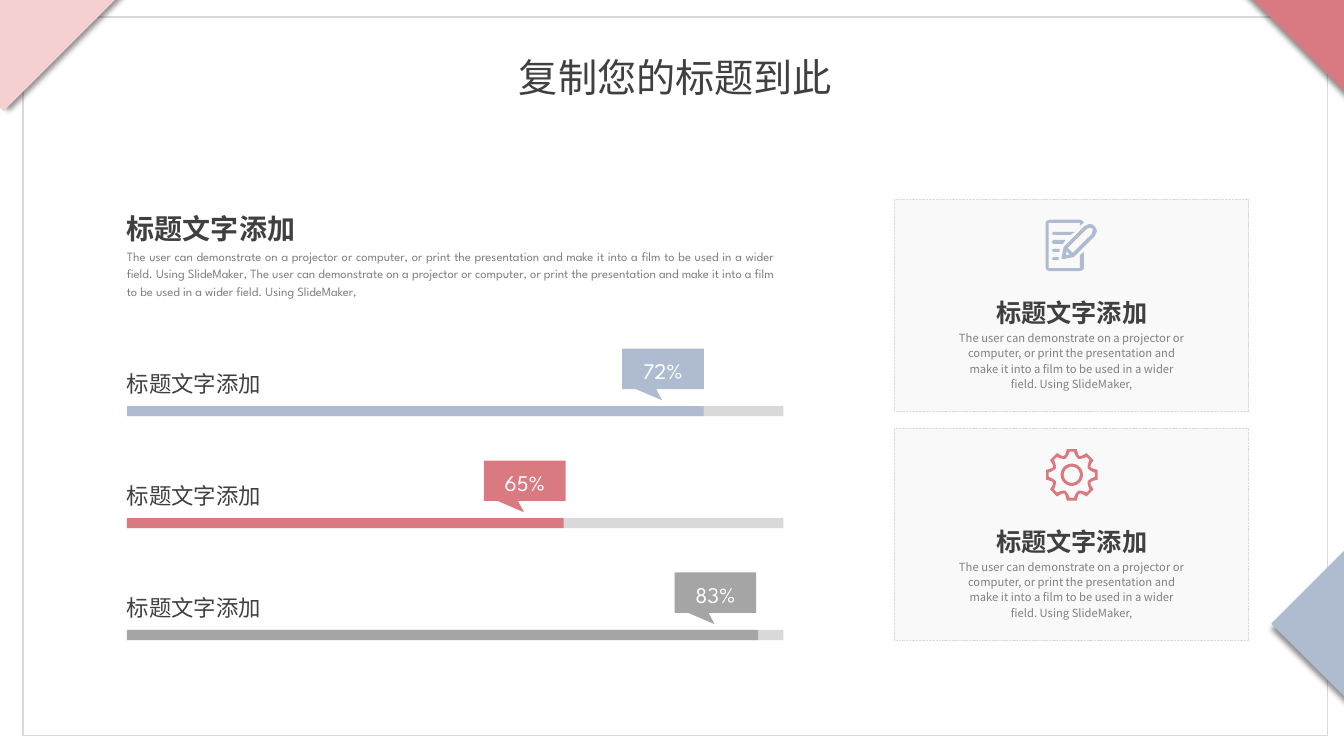
"""Build the slide with three progress bars and two icon cards."""
import dataclasses
import math

import lxml.etree
import pptx
import pptx.dml.color
import pptx.enum.dml
import pptx.enum.shapes
import pptx.enum.text
import pptx.oxml
import pptx.oxml.ns
import pptx.util

PX = pptx.util.Inches(0.01)
SHAPE = pptx.enum.shapes.MSO_SHAPE
ALIGN = pptx.enum.text.PP_ALIGN
HEADING = "标题文字添加"
SENTENCE = (
    "The user can demonstrate on a projector or computer, or print the presentation "
    "and make it into a film to be used in a wider field. Using SlideMaker,"
)
NOTE_ICON = [
    [(4, 0), (34, 0), (37, 1), (38, 3), (34, 6), (34, 3), (3, 3), (3, 48), (34, 48), (34, 35),
     (38, 32), (38, 48), (37, 50), (34, 51), (4, 51), (1, 50), (0, 48), (0, 3), (1, 1)],
    [(44, 4), (47, 5), (49, 7), (51, 11), (49, 16), (28, 37), (18, 39), (16, 39), (16, 37),
     (18, 27), (39, 6)],
    [(41, 9), (22, 28), (27, 33), (46, 14), (47, 9), (44, 8)],
    [(21, 31), (20, 35), (24, 35)],
    [(8, 12), (29, 12), (25, 15), (8, 15), (6, 14)],
    [(8, 20), (20, 20), (17, 24), (8, 24), (6, 22)],
    [(8, 29), (14, 29), (14, 32), (8, 32), (6, 30)],
    [(8, 37), (13, 37), (13, 40), (8, 40), (6, 39)],
]
GEAR_OUTSIDE = [(-11, 26), (11, 26), (13, 24), (18, 21), (22, 20), (27, 21), (32, 24)]
GEAR_INSIDE = [(-5, 23), (5, 23), (10, 20), (16, 18), (22, 17), (29, 18), (35, 20)]


@dataclasses.dataclass(frozen=True)
class Theme:
    """Colours, fonts and type sizes of the slide."""

    white: str = "FFFFFF"
    pale_pink: str = "F4D0D1"
    rose: str = "D97A83"
    red: str = "D97980"
    blue: str = "AEBBD0"
    gray: str = "A5A5A5"
    rule: str = "D9D9D9"
    card: str = "F2F2F2"
    dark: str = "404040"
    muted: str = "808080"
    latin: str = "League Spartan"
    chinese: str = "Noto Sans CJK SC"
    title: int = 28
    section: int = 20
    card_heading: int = 18
    label: int = 16
    body: int = 9
    card_body: int = 8


THEME = Theme()


def rgb(color):
    """Turn a hex colour into an RGB value."""
    return pptx.dml.color.RGBColor.from_string(color)


def paint(shape, color):
    """Give a shape a plain fill without line or shadow."""
    shape.shadow.inherit = False
    shape.fill.solid()
    shape.fill.fore_color.rgb = rgb(color)
    shape.line.fill.background()


def add_box(slide, left, top, width, height, color, kind=SHAPE.RECTANGLE):
    """Add a filled preset shape."""
    shape = slide.shapes.add_shape(kind, left * PX, top * PX, width * PX, height * PX)
    paint(shape, color)
    return shape


def outline(shape, points):
    """Draw a thin gray line round a shape."""
    shape.line.color.rgb = rgb(THEME.rule)
    shape.line.width = pptx.util.Pt(points)


def add_corner(slide, left, top, width, height, color, direction):
    """Add a turned rectangle with a soft shadow."""
    shape = add_box(slide, left, top, width, height, color)
    shape.rotation = 315
    effects = shape._element.spPr.find(pptx.oxml.ns.qn("a:effectLst"))
    effects.append(pptx.oxml.parse_xml(
        f'<a:outerShdw {pptx.oxml.ns.nsdecls("a")} blurRad="50800" dist="50800" '
        f'dir="{direction * 60000}" rotWithShape="0"><a:srgbClr val="000000">'
        '<a:alpha val="44000"/></a:srgbClr></a:outerShdw>'))


def write(shape, text, size, color, font, align, spacing=1.2, bold=False):
    """Write one paragraph into a shape."""
    shape.text_frame.word_wrap = True
    paragraph = shape.text_frame.paragraphs[0]
    paragraph.alignment = align
    paragraph.line_spacing = spacing
    run = paragraph.add_run()
    run.text = text
    run.font.name = font
    run.font.size = pptx.util.Pt(size)
    run.font.bold = bold
    run.font.color.rgb = rgb(color)
    east_asian = lxml.etree.SubElement(run._r.get_or_add_rPr(), pptx.oxml.ns.qn("a:ea"))
    east_asian.set("typeface", THEME.chinese)


def add_text(slide, left, top, width, height, *content, **options):
    """Add a text box with one paragraph."""
    box = slide.shapes.add_textbox(left * PX, top * PX, width * PX, height * PX)
    write(box, *content, **options)
    return box


def gear_icon():
    """Return the contours of an eight-toothed gear with a ring."""
    circle = [(angle, 0) for angle in range(0, 45, 9)]
    rings = [[(angle, radius) for angle, _ in circle] for radius in (11, 8)]
    return [
        [(26 + radius * math.sin(math.radians(angle + turn)),
          26 - radius * math.cos(math.radians(angle + turn)))
         for turn in range(0, 360, 45) for angle, radius in profile]
        for profile in (GEAR_OUTSIDE, GEAR_INSIDE, *rings)
    ]


def add_icon(slide, left, top, contours, color):
    """Add an icon made of closed contours."""
    placed = [[(round((left + x) * PX), round((top + y) * PX)) for x, y in contour]
              for contour in contours]
    builder = slide.shapes.build_freeform(*placed[0][0])
    for contour in placed:
        builder.move_to(*contour[0])
        builder.add_line_segments(contour[1:], close=True)
    paint(builder.convert_to_shape(), color)


def add_card(slide, top, contours, color):
    """Add a dashed card with icon, heading and text."""
    card = add_box(slide, 887, top, 351, 210, THEME.card)
    outline(card, 0.25)
    card.line.dash_style = pptx.enum.dml.MSO_LINE.SQUARE_DOT
    fill_color = card._element.spPr.find(".//" + pptx.oxml.ns.qn("a:srgbClr"))
    lxml.etree.SubElement(fill_color, pptx.oxml.ns.qn("a:alpha")).set("val", "40000")
    add_icon(slide, 1037, top + 20, contours, color)
    add_text(slide, 926, top + 86, 274, 44, HEADING, THEME.card_heading, THEME.dark,
             THEME.chinese, ALIGN.CENTER, bold=True)
    add_text(slide, 939, top + 124, 248, 71, SENTENCE, THEME.card_body, THEME.muted,
             THEME.chinese, ALIGN.CENTER, spacing=1.14)


def add_progress(slide, top, length, callout_left, percent, color):
    """Add a labelled progress bar with its callout."""
    add_box(slide, 126, top + 57, 651, 10, THEME.rule)
    add_box(slide, 126, top + 57, length, 10, color)
    add_text(slide, 116, top + 11, 274, 40, HEADING, THEME.label, THEME.dark,
             THEME.latin, ALIGN.JUSTIFY)
    callout = add_box(slide, callout_left, top, 81, 40, color, SHAPE.RECTANGULAR_CALLOUT)
    callout.adjustments[0] = -0.01
    callout.adjustments[1] = 0.78
    callout.text_frame.margin_top = 3 * PX
    callout.text_frame.vertical_anchor = pptx.enum.text.MSO_ANCHOR.TOP
    write(callout, percent, THEME.label, THEME.white, THEME.latin, ALIGN.CENTER)


def main():
    """Build and save the presentation."""
    presentation = pptx.Presentation()
    presentation.slide_width = 1333 * PX
    presentation.slide_height = 750 * PX
    slide = presentation.slides.add_slide(presentation.slide_layouts[6])

    outline(add_box(slide, 23, 17, 1294, 713, THEME.white), 1)
    add_corner(slide, -62, -48, 168, 116, THEME.pale_pink, 0)
    add_corner(slide, 1274, -92, 90, 208, THEME.rose, 90)
    add_corner(slide, 1293, 547, 141, 149, THEME.blue, 90)
    title = add_text(slide, 503, 48, 334, 57, "复制您的标题到此", THEME.title, THEME.dark,
                     THEME.chinese, ALIGN.CENTER, spacing=1.0)
    title.text_frame.word_wrap = False

    add_card(slide, 198, NOTE_ICON, THEME.blue)
    add_card(slide, 425, gear_icon(), THEME.red)

    add_text(slide, 116, 198, 216, 47, HEADING, THEME.section, THEME.dark,
             THEME.latin, ALIGN.JUSTIFY, bold=True)
    add_text(slide, 116, 240, 661, 62, f"{SENTENCE} {SENTENCE}", THEME.body, THEME.muted,
             THEME.latin, ALIGN.JUSTIFY, spacing=1.14)
    progress = [
        (572, 617, "72%", THEME.blue),
        (433, 480, "65%", THEME.red),
        (626, 669, "83%", THEME.gray),
    ]
    for row, values in enumerate(progress):
        add_progress(slide, 346 + 111 * row, *values)
    presentation.save("out.pptx")


if __name__ == "__main__":
    main()
